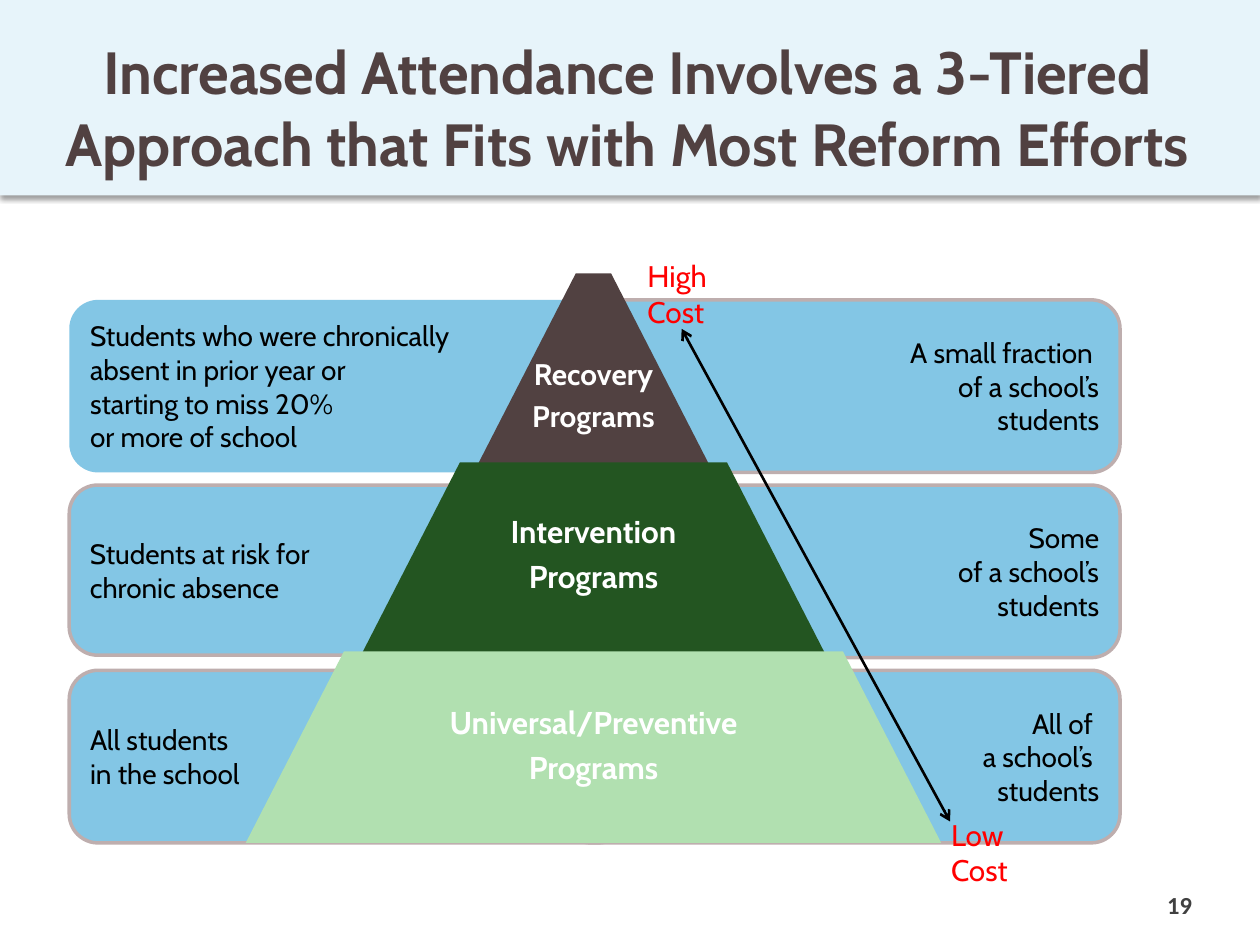
from lxml import etree
from pptx import Presentation
from pptx.dml.color import RGBColor
from pptx.enum.shapes import MSO_CONNECTOR as CONN, MSO_SHAPE as SHAPE
from pptx.enum.text import MSO_ANCHOR as ANCHOR, MSO_AUTO_SIZE as AUTO, PP_ALIGN as ALIGN
from pptx.oxml import parse_xml
from pptx.oxml.ns import nsdecls, qn
from pptx.util import Inches, Pt


def rgb(value):
    return RGBColor.from_string(value)


class TierSlide:
    font = "Cabin"
    brown = "514141"
    panel_fill = "83C6E5"
    panel_line = "BEAEAE"

    def __init__(self, prs):
        self.s = prs.slides.add_slide(prs.slide_layouts[5])

    def set_text(self, sp, text, size, color, align=ALIGN.LEFT, bold=False,
                 anchor=ANCHOR.MIDDLE, font=None, spacing=None, after=None):
        tf = sp.text_frame
        tf.text = text
        tf.word_wrap = True
        tf.auto_size = AUTO.NONE
        tf.vertical_anchor = anchor
        for p in tf.paragraphs:
            p.alignment = align
            p.line_spacing = spacing
            p.space_after = after
            for r in p.runs:
                r.font.name = font or self.font
                r.font.size = Pt(size)
                r.font.bold = bold
                r.font.color.rgb = rgb(color)

    def shape(self, kind, x, y, w, h, fill, line=None):
        sp = self.s.shapes.add_shape(kind, Inches(x), Inches(y), Inches(w), Inches(h))
        sp.shadow.inherit = False
        sp.fill.solid()
        sp.fill.fore_color.rgb = rgb(fill)
        if line:
            sp.line.color.rgb = rgb(line)
            sp.line.width = Pt(2)
        else:
            sp.line.fill.background()
        return sp

    def title(self, text):
        sp = self.s.shapes.title
        sp.left, sp.top, sp.width, sp.height = map(Inches, (0.33, 0.23, 9.3, 1.07))
        self.set_text(sp, text, 34, self.brown, ALIGN.CENTER, True, ANCHOR.TOP)

    def banner(self, w, h):
        sp = self.shape(SHAPE.RECTANGLE, 0, 0, w, h, "E7F4FA")
        effects = sp.element.spPr.find(qn("a:effectLst"))
        effects.append(parse_xml(
            f'<a:outerShdw {nsdecls("a")} blurRad="{Pt(3.1)}" dist="{Pt(1.6)}" '
            'dir="5400000" algn="t" rotWithShape="0"><a:srgbClr val="000000">'
            '<a:alpha val="38000"/></a:srgbClr></a:outerShdw>'))
        self.s.shapes.title.element.addprevious(sp.element)

    def panel(self, x, y, w, h, text, align, line):
        sp = self.shape(SHAPE.ROUNDED_RECTANGLE, x, y, w, h, self.panel_fill, line)
        self.set_text(sp, text, 16, "000000", align)

    def text(self, x, y, w, h, text, size, color, inset=None, **style):
        sp = self.s.shapes.add_textbox(Inches(x), Inches(y), Inches(w), Inches(h))
        if inset is not None:
            tf = sp.text_frame
            tf.margin_left = tf.margin_right = Inches(inset)
            tf.margin_top = tf.margin_bottom = Inches(inset)
        self.set_text(sp, text, size, color, **style)

    def tier(self, center, y, w, h, fill, text, size, label_w, label_y):
        sp = self.shape(SHAPE.TRAPEZOID, center - w / 2, y, w, h, fill)
        sp.adjustments[0] = 0.513
        self.text(center - label_w / 2, label_y, label_w, h, text, size, "FFFFFF",
                  inset=0.02, align=ALIGN.CENTER, bold=True, spacing=0.9,
                  after=Pt(size * 0.35))

    def double_arrow(self, x1, y1, x2, y2):
        cx = self.s.shapes.add_connector(
            CONN.STRAIGHT, Inches(x1), Inches(y1), Inches(x2), Inches(y2))
        cx.line.color.rgb = rgb("000000")
        cx.line.width = Pt(1.5)
        ln = cx.element.spPr.find(qn("a:ln"))
        for end in ("a:headEnd", "a:tailEnd"):
            etree.SubElement(ln, qn(end), type="arrow")
        etree.SubElement(cx.element.spPr, qn("a:effectLst"))


def main():
    prs = Presentation()
    prs.slide_width, prs.slide_height = Inches(10), Inches(7.5)
    slide = TierSlide(prs)
    slide.banner(10, 1.55)
    slide.title("Increased Attendance Involves a 3-Tiered "
                "Approach that Fits with Most Reform Efforts")

    line = slide.panel_line
    rows = [
        ("Students who were chronically\nabsent in prior year or\n"
         "starting to miss 20%\nor more of school", 4.43, 1.37, None,
         "A small fraction \nof a school’s\nstudents"),
        ("Students at risk for\nchronic absence", 3.24, 1.35, line,
         "Some\nof a school’s\nstudents"),
        ("All students\nin the school", 4.43, 1.37, line,
         "All of \na school’s \nstudents"),
    ]
    for i, (who, width, height, left_line, share) in enumerate(rows):
        y = 2.38 + 1.47 * i
        slide.panel(4.46, y, 4.43, 1.37, share, ALIGN.RIGHT, line)
        slide.panel(0.55, y, width, height, who, ALIGN.LEFT, left_line)

    tiers = [
        (slide.brown, "Recovery\nPrograms", 17, 1.84, 2.39),
        ("235521", "Intervention\nPrograms", 18, 2.39, 3.65),
        ("B1E0B0", "Universal/Preventive\nPrograms", 18, 3.59, 5.17),
    ]
    for i, (fill, text, size, label_w, label_y) in enumerate(tiers):
        slide.tier(4.71, 2.17 + 1.5 * i, 1.84 * (i + 1), 1.52, fill, text,
                   size, label_w, label_y)

    slide.double_arrow(5.41, 2.61, 7.54, 6.52)
    for x, y, w, text in ((5.04, 2, 0.92, "High Cost"), (7.45, 6.43, 0.83, "Low Cost")):
        slide.text(x, y, w, 0.67, text, 17, "FF0000", anchor=ANCHOR.TOP)
    slide.text(7.23, 6.98, 2.33, 0.4, "19", 14, "404040", align=ALIGN.RIGHT,
               bold=True, font="Calibri")
    prs.save("out.pptx")


if __name__ == "__main__":
    main()
